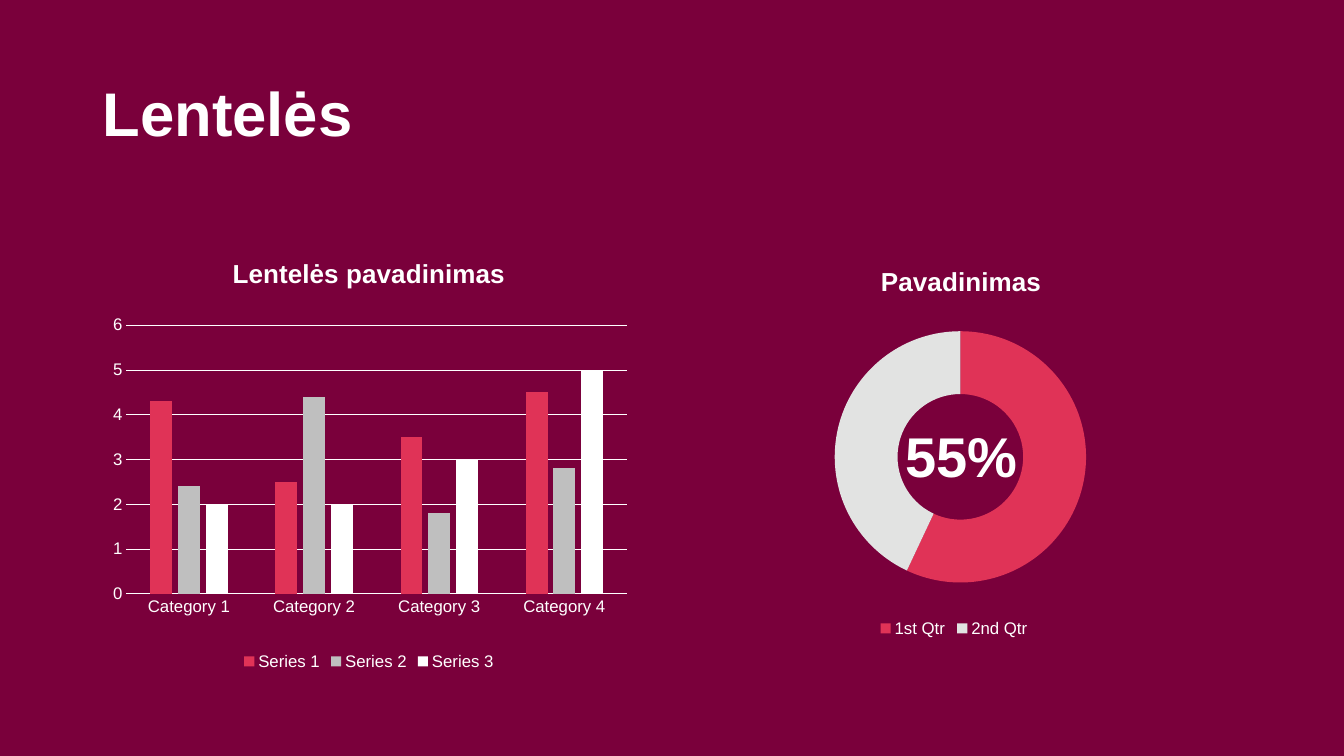
from lxml import etree
from pptx import Presentation
from pptx.chart.data import CategoryChartData
from pptx.dml.color import RGBColor
from pptx.enum.chart import XL_CHART_TYPE, XL_LEGEND_POSITION, XL_TICK_MARK
from pptx.enum.text import MSO_ANCHOR, PP_ALIGN
from pptx.oxml.ns import qn
from pptx.util import Inches, Pt

COLUMN = XL_CHART_TYPE.COLUMN_CLUSTERED
DOUGHNUT = XL_CHART_TYPE.DOUGHNUT
BOTTOM = XL_LEGEND_POSITION.BOTTOM
NO_TICK = XL_TICK_MARK.NONE
TOP, MIDDLE = MSO_ANCHOR.TOP, MSO_ANCHOR.MIDDLE
LEFT, CENTER = PP_ALIGN.LEFT, PP_ALIGN.CENTER

WIDTH, HEIGHT = 13.33, 7.5
MARGIN = 0.92
COLUMN_WIDTH, GUTTER = 5.48, 0.35
CHART_TOP, CHART_HEIGHT = 2.36, 4.33
FONT = "Arial"
WHITE, WINE, RED = "FFFFFF", "7A003B", "E03357"
GRAY, PALE = "BFBFBF", "E2E3E2"


def rgb(color):
    return RGBColor.from_string(color)


def column_left(column):
    return MARGIN + column * (COLUMN_WIDTH + GUTTER)


def paint(fmt, color):
    fmt.fill.solid()
    fmt.fill.fore_color.rgb = rgb(color)


def set_font(font, size, bold=False):
    font.name = FONT
    font.size = Pt(size)
    font.bold = bold
    font.color.rgb = rgb(WHITE)


def set_line(line, width):
    line.color.rgb = rgb(WHITE)
    line.width = Pt(width)


def add_text(s, text, box, size, align=LEFT, anchor=TOP, spacing=1.0):
    sp = s.shapes.add_textbox(*map(Inches, box))
    tf = sp.text_frame
    tf.word_wrap = True
    tf.vertical_anchor = anchor
    p = tf.paragraphs[0]
    p.alignment = align
    p.line_spacing = spacing
    r = p.add_run()
    r.text = text
    set_font(r.font, size, True)


def set_layout(parent, after, inner=False, **place):
    for old in parent.findall(qn("c:layout")):
        parent.remove(old)
    layout = etree.Element(qn("c:layout"))
    manual = etree.SubElement(layout, qn("c:manualLayout"))
    if inner:
        etree.SubElement(manual, qn("c:layoutTarget")).set("val", "inner")
    for key in "xy":
        etree.SubElement(manual, qn(f"c:{key}Mode")).set("val", "edge")
    for key, value in place.items():
        etree.SubElement(manual, qn(f"c:{key}")).set("val", str(value))
    if after is None:
        parent.insert(0, layout)
    else:
        after.addnext(layout)


def add_chart(s, kind, column, title, categories, series, plot):
    data = CategoryChartData()
    data.categories = categories
    for name, values in series:
        data.add_series(name, values)
    box = column_left(column), CHART_TOP, COLUMN_WIDTH, CHART_HEIGHT
    chart = s.shapes.add_chart(kind, *map(Inches, box), data).chart
    set_font(chart.font, 10)
    chart.has_title = True
    tf = chart.chart_title.text_frame
    tf.text = title
    set_font(tf.paragraphs[0].runs[0].font, 18.6, True)
    chart.has_legend = True
    chart.legend.position = BOTTOM
    chart.legend.include_in_layout = False
    set_font(chart.legend.font, 12)
    area = chart.plots[0]._element.getparent()
    set_layout(area, None, True, **dict(zip("xywh", plot)))
    return chart


def style_axis(axis):
    axis.major_tick_mark = axis.minor_tick_mark = NO_TICK
    set_font(axis.tick_labels.font, 12)


def add_columns(s):
    series = [
        ("Series 1", (4.3, 2.5, 3.5, 4.5)),
        ("Series 2", (2.4, 4.4, 1.8, 2.8)),
        ("Series 3", (2, 2, 3, 5)),
    ]
    categories = [f"Category {n}" for n in range(1, 5)]
    chart = add_chart(s, COLUMN, 0, "Lentelės pavadinimas", categories, series,
                      (0.061, 0.2, 0.906, 0.616))
    plot = chart.plots[0]
    plot.vary_by_categories = False
    plot.gap_width, plot.overlap = 219, -27
    for item, color in zip(plot.series, (RED, GRAY, WHITE)):
        paint(item.format, color)
    style_axis(chart.category_axis)
    set_line(chart.category_axis.format.line, 0.75)
    axis = chart.value_axis
    style_axis(axis)
    axis.minimum_scale, axis.maximum_scale, axis.major_unit = 0, 6, 1
    axis.format.line.fill.background()
    axis.has_major_gridlines = True
    set_line(axis.major_gridlines.format.line, 0.5)


def add_doughnut(s):
    chart = add_chart(s, DOUGHNUT, 1, "Pavadinimas", ["1st Qtr", "2nd Qtr"],
                      [("Series 1", (57, 43))], (0.279, 0.214, 0.455, 0.576))
    plot = chart.plots[0]
    plot.vary_by_categories = True
    plot._element.find(qn("c:holeSize")).set("val", "61")
    for i, color in enumerate((RED, PALE)):
        point = plot.series[0].points[i].format
        paint(point, color)
        point.line.fill.background()
    title = chart.chart_title._element
    set_layout(title, title.find(qn("c:tx")), x=0.354, y=0.05)
    legend = chart.legend._element
    set_layout(legend, legend.find(qn("c:legendPos")),
               x=0.35, y=0.86, w=0.29, h=0.07)


def main():
    prs = Presentation()
    prs.slide_width, prs.slide_height = Inches(WIDTH), Inches(HEIGHT)
    s = prs.slides.add_slide(prs.slide_layouts[6])
    paint(s.background, WINE)
    add_columns(s)
    add_doughnut(s)
    add_text(s, "55%", (8.87, 4.13, 1.33, 0.77), 40, CENTER, MIDDLE)
    add_text(s, "Lentelės", (MARGIN, 0.78, 9.77, 1.45), 44, spacing=0.9)
    prs.save("out.pptx")


if __name__ == "__main__":
    main()
